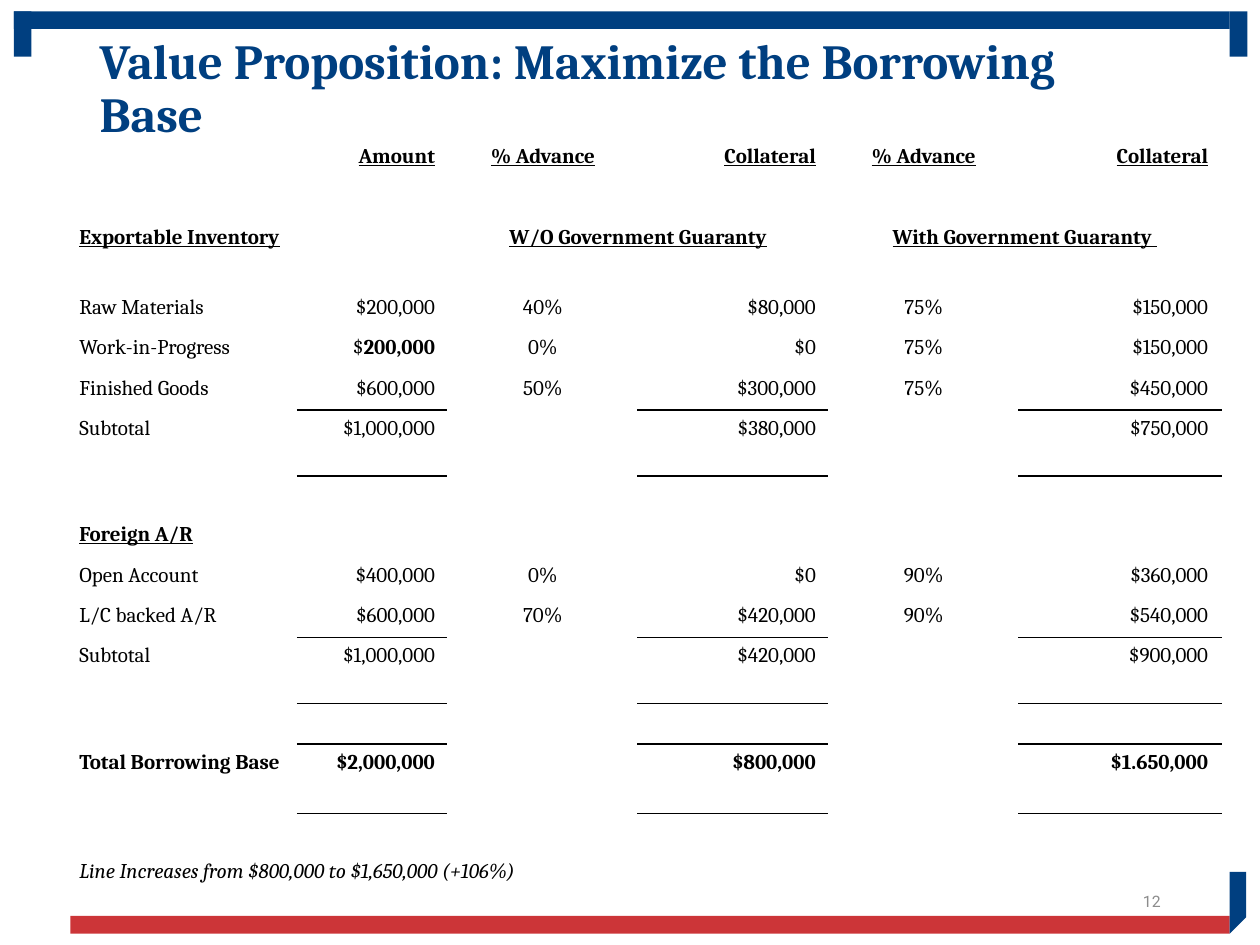
"""Build the borrowing base comparison slide."""
from dataclasses import dataclass

import pptx
import pptx.dml.color
import pptx.enum.shapes
import pptx.enum.text
import pptx.oxml
import pptx.oxml.ns
import pptx.util
from pptx.util import Inches

ALIGN = pptx.enum.text.PP_ALIGN
MIDDLE = pptx.enum.text.MSO_ANCHOR.MIDDLE


@dataclass(frozen=True)
class Theme:
    navy: str = "003F80"
    red: str = "CC3538"
    grey: str = "8C8C8C"
    black: str = "000000"
    serif: str = "Cambria"
    sans: str = "Roboto"
    title_size: int = 28
    table_size: int = 12
    number_size: int = 9
    rule_width: int = 1


@dataclass(frozen=True)
class Bar:
    left: float
    top: float
    width: float
    height: float
    color: str


@dataclass(frozen=True)
class Row:
    cells: tuple[str, ...] = ()
    height: float = 0.32
    bold: bool = False
    underline: bool = False
    italic: bool = False
    ruled: bool = False
    spans: tuple[tuple[int, int], ...] = ()
    bold_figure: str = ""


THEME = Theme()
BARS = (
    Bar(0.11, 0.09, 9.65, 0.14, THEME.navy),
    Bar(9.76, 0.09, 0.14, 0.36, THEME.navy),
    Bar(0.11, 0.09, 0.14, 0.36, THEME.navy),
    Bar(0.56, 7.27, 9.2, 0.14, THEME.red),
)
CORNER = ((9.76, 6.92), (9.89, 6.92), (9.89, 7.28), (9.76, 7.41))
TABLE_WIDTH, TABLE_HEIGHT = 9.16, 6
COLUMN_WIDTHS = (1.83, 1.19, 1.51, 1.51, 1.51, 1.6)
COLUMN_ALIGN = (ALIGN.LEFT, ALIGN.RIGHT, ALIGN.CENTER, ALIGN.RIGHT, ALIGN.CENTER, ALIGN.RIGHT)
RULED_COLUMNS = (1, 3, 5)
ROWS = (
    Row(("", "Amount", "% Advance", "Collateral", "% Advance", "Collateral"), bold=True, underline=True),
    Row(),
    Row(("Exportable Inventory", "", "W/O Government Guaranty", "", "With Government Guaranty "),
        height=0.55, bold=True, underline=True, spans=((2, 3), (4, 5))),
    Row(("Raw Materials", "$200,000", "40%", "$80,000", "75%", "$150,000")),
    Row(("Work-in-Progress", "$200,000", "0%", "$0", "75%", "$150,000"), bold_figure="$200,000"),
    Row(("Finished Goods", "$600,000", "50%", "$300,000", "75%", "$450,000"), ruled=True),
    Row(("Subtotal", "$1,000,000", "", "$380,000", "", "$750,000"), height=0.52, ruled=True),
    Row(),
    Row(("Foreign A/R",), bold=True, underline=True),
    Row(("Open Account", "$400,000", "0%", "$0", "90%", "$360,000")),
    Row(("L/C backed A/R", "$600,000", "70%", "$420,000", "90%", "$540,000"), ruled=True),
    Row(("Subtotal", "$1,000,000", "", "$420,000", "", "$900,000"), height=0.52, ruled=True),
    Row(ruled=True),
    Row(("Total Borrowing Base", "$2,000,000", "", "$800,000", "", "$1.650,000"),
        height=0.55, bold=True, ruled=True),
    Row(),
    Row(("Line Increases from $800,000 to $1,650,000 (+106%)",), italic=True, spans=((0, 4),)),
)


def style_runs(paragraph, font: str, size: int, color: str, bold: bool = False) -> None:
    """Apply one typeface, size and colour to every run."""
    for run in paragraph.runs:
        run.font.name = font
        run.font.size = pptx.util.Pt(size)
        run.font.bold = bold
        run.font.color.rgb = pptx.dml.color.RGBColor.from_string(color)


def paint(shape, color: str) -> None:
    """Give a shape a plain fill without outline or shadow."""
    shape.shadow.inherit = False
    shape.fill.solid()
    shape.fill.fore_color.rgb = pptx.dml.color.RGBColor.from_string(color)
    shape.line.fill.background()


def draw_frame(slide) -> None:
    """Draw the coloured bars and the cut corner."""
    for bar in BARS:
        bounds = map(Inches, (bar.left, bar.top, bar.width, bar.height))
        paint(slide.shapes.add_shape(pptx.enum.shapes.MSO_SHAPE.RECTANGLE, *bounds), bar.color)
    start, *rest = [(Inches(x), Inches(y)) for x, y in CORNER]
    builder = slide.shapes.build_freeform(*start)
    builder.add_line_segments(rest, close=True)
    paint(builder.convert_to_shape(), THEME.navy)


def draw_rule(cell, edge: str) -> None:
    """Add a black border to one edge of a cell."""
    cell._tc.get_or_add_tcPr().append(pptx.oxml.parse_xml(
        f'<a:{edge} {pptx.oxml.ns.nsdecls("a")} w="{pptx.util.Pt(THEME.rule_width)}"><a:solidFill>'
        f'<a:srgbClr val="{THEME.black}"/></a:solidFill></a:{edge}>'))


def fill_cell(cell, text: str, row: Row, align) -> None:
    """Write and format the text of one table cell."""
    paragraph = cell.text_frame.paragraphs[0]
    paragraph.alignment = align
    split_figure = bool(text) and text == row.bold_figure
    if split_figure:
        paragraph.text = text[0]
        paragraph.add_run().text = text[1:]
    elif text:
        paragraph.text = text
    style_runs(paragraph, THEME.serif, THEME.table_size, THEME.black, row.bold)
    for run in paragraph.runs:
        run.font.underline = row.underline
        run.font.italic = row.italic
    if split_figure:
        paragraph.runs[-1].font.bold = True
    paragraph._p.get_or_add_endParaRPr().set("sz", str(THEME.table_size * 100))


def draw_table(slide) -> None:
    """Draw the borrowing base table, stretched to its full size."""
    stretch_x = TABLE_WIDTH / sum(COLUMN_WIDTHS)
    stretch_y = TABLE_HEIGHT / sum(row.height for row in ROWS)
    table = slide.shapes.add_table(
        len(ROWS), len(COLUMN_WIDTHS), Inches(0.53), Inches(1.1),
        Inches(TABLE_WIDTH), Inches(TABLE_HEIGHT)).table
    table.first_row = table.horz_banding = False
    for column, width in zip(table.columns, COLUMN_WIDTHS):
        column.width = Inches(width * stretch_x)
    for index, row in enumerate(ROWS):
        table.rows[index].height = Inches(row.height * stretch_y)
        for position, align in enumerate(COLUMN_ALIGN):
            cell = table.cell(index, position)
            text = row.cells[position] if position < len(row.cells) else ""
            fill_cell(cell, text, row, align)
            if position in RULED_COLUMNS:
                if index and ROWS[index - 1].ruled:
                    draw_rule(cell, "lnT")
                if row.ruled:
                    draw_rule(cell, "lnB")
            cell.fill.background()
        for first, last in row.spans:
            table.cell(index, first).merge(table.cell(index, last))


def write_title(slide) -> None:
    """Place and format the slide title."""
    title = slide.shapes.title
    title.left, title.top, title.width, title.height = map(Inches, (0.69, 0.4, 8.62, 0.63))
    title.text_frame.text = "Value Proposition: Maximize the Borrowing Base"
    title.text_frame.word_wrap = True
    title.text_frame.auto_size = pptx.enum.text.MSO_AUTO_SIZE.NONE
    title.text_frame.vertical_anchor = MIDDLE
    heading = title.text_frame.paragraphs[0]
    heading.alignment = ALIGN.LEFT
    heading.line_spacing = 0.9
    style_runs(heading, THEME.serif, THEME.title_size, THEME.navy, bold=True)


def write_page_number(slide) -> None:
    """Write the page number at the lower right."""
    frame = slide.shapes.add_textbox(*map(Inches, (7.06, 6.95, 2.25, 0.4))).text_frame
    frame.text = "12"
    frame.word_wrap = True
    frame.vertical_anchor = MIDDLE
    frame.paragraphs[0].alignment = ALIGN.RIGHT
    style_runs(frame.paragraphs[0], THEME.sans, THEME.number_size, THEME.grey)


def main() -> None:
    """Assemble and save the presentation."""
    deck = pptx.Presentation()
    deck.slide_width, deck.slide_height = Inches(10), Inches(7.5)
    slide = deck.slides.add_slide(deck.slide_layouts[5])
    draw_frame(slide)
    write_page_number(slide)
    draw_table(slide)
    write_title(slide)
    deck.save("out.pptx")


if __name__ == "__main__":
    main()
